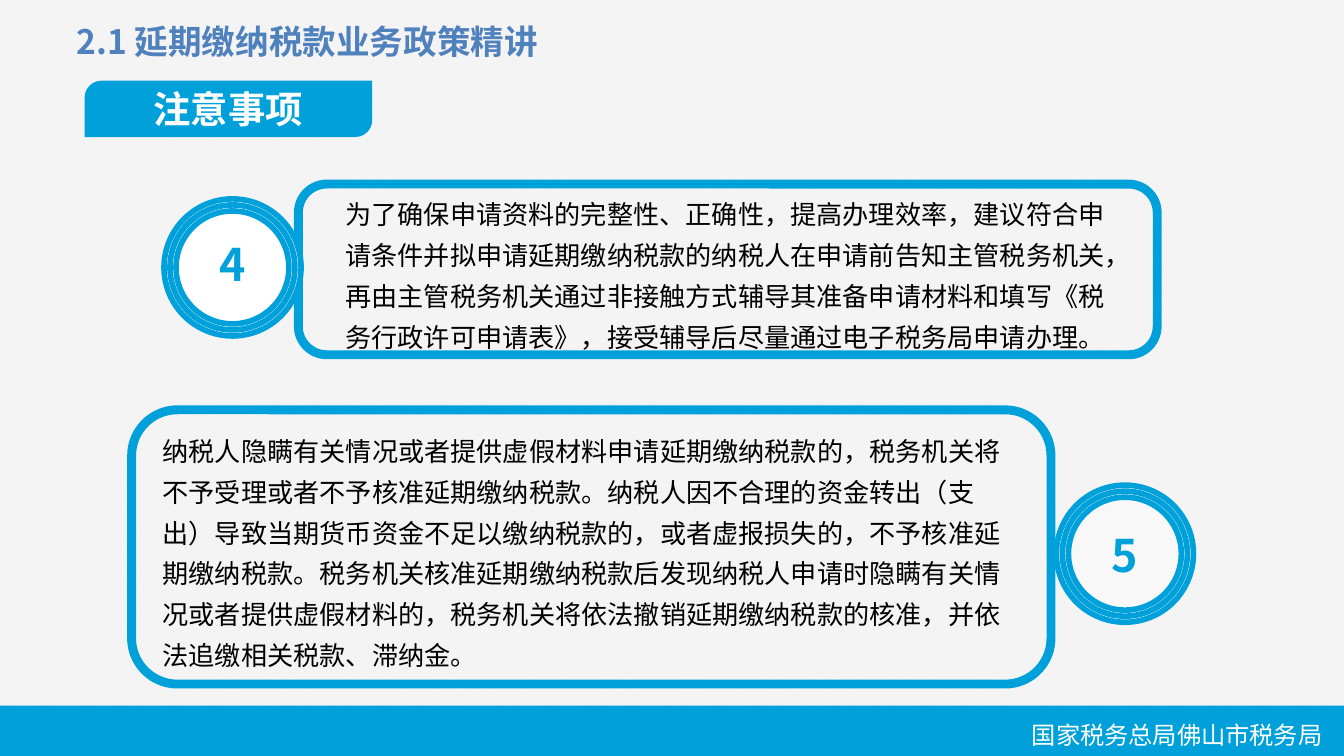
from lxml.etree import SubElement
from pptx import Presentation
from pptx.dml.color import RGBColor
from pptx.enum.dml import MSO_PATTERN
from pptx.enum.shapes import MSO_SHAPE as SHAPE
from pptx.enum.text import MSO_ANCHOR as ANCHOR, PP_ALIGN as ALIGN
from pptx.oxml.ns import qn
from pptx.util import Inches, Pt

FONT = "Noto Sans CJK SC"
BLUE, WHITE, BLACK = "00A1DA", "FFFFFF", "000000"
TITLE_BLUE, PALE, GREY = "4F81BD", "F8F8F8", "F2F2F2"
NARROW, NORMAL = (0.07, 0.04), (0.1, 0.05)

NOTE_4 = (
    "为了确保申请资料的完整性、正确性，提高办理效率，建议符合申请条件并拟申请延期缴纳税款的"
    "纳税人在申请前告知主管税务机关，再由主管税务机关通过非接触方式辅导其准备申请材料和填写"
    "《税务行政许可申请表》，接受辅导后尽量通过电子税务局申请办理。"
)
NOTE_5 = (
    "纳税人隐瞒有关情况或者提供虚假材料申请延期缴纳税款的，税务机关将不予受理或者不予核准"
    "延期缴纳税款。纳税人因不合理的资金转出（支出）导致当期货币资金不足以缴纳税款的，"
    "或者虚报损失的，不予核准延期缴纳税款。税务机关核准延期缴纳税款后发现纳税人申请时隐瞒"
    "有关情况或者提供虚假材料的，税务机关将依法撤销延期缴纳税款的核准，并依法追缴相关税款、滞纳金。"
)


def color(value):
    return RGBColor.from_string(value)


def add_shape(shapes, kind, box, fill=None, line=None, width=0):
    sp = shapes.add_shape(kind, *map(Inches, box))
    sp.shadow.inherit = False
    if fill:
        sp.fill.solid()
        sp.fill.fore_color.rgb = color(fill)
    else:
        sp.fill.background()
    if line:
        sp.line.color.rgb = color(line)
        sp.line.width = Pt(width)
    else:
        sp.line.fill.background()
    return sp


def write(sp, text, size, ink, bold=False, align=ALIGN.LEFT, spacing=None):
    p = sp.text_frame.paragraphs[0]
    p.alignment = align
    if spacing:
        p.line_spacing = spacing
    r = p.add_run()
    r.text = text
    r.font.name, r.font.size, r.font.bold = FONT, Pt(size), bold
    r.font.color.rgb = color(ink)
    SubElement(r.font._element, qn("a:ea")).set("typeface", FONT)


def add_text(slide, box, text, size, ink, insets=NORMAL, wrap=True, **style):
    sp = slide.shapes.add_textbox(*map(Inches, box))
    tf = sp.text_frame
    tf.word_wrap = wrap
    tf.margin_left = tf.margin_right = Inches(insets[0])
    tf.margin_top = tf.margin_bottom = Inches(insets[1])
    write(sp, text, size, ink, **style)


def add_footer(slide, x, y, w, h):
    add_shape(slide.shapes, SHAPE.RECTANGLE, (x, y, w, h), BLUE)
    add_text(slide, (x + 7.61, y + 0.06, 2.5, 0.32), "国家税务总局佛山市税务局", 13, WHITE)


def add_header(slide, x, y):
    add_text(slide, (x, y, 3.69, 0.4), "2.1 延期缴纳税款业务政策精讲", 18, TITLE_BLUE,
             wrap=False, bold=True)
    # Section tab
    tab = add_shape(slide.shapes, SHAPE.ROUND_2_DIAG_RECTANGLE,
                    (x + 0.16, y + 0.49, 2.14, 0.42), BLUE)
    tab.adjustments[0], tab.adjustments[1] = 0.3, 0
    tab.text_frame.vertical_anchor = ANCHOR.MIDDLE
    write(tab, "注意事项", 20, WHITE, bold=True, align=ALIGN.CENTER)


def add_badge(slide, x, y, number, number_box, fills, align):
    # Three concentric rings
    rings = slide.shapes.add_group_shape().shapes
    for i, fill in enumerate(fills):
        gap = 0.09 * i / 2
        add_shape(rings, SHAPE.OVAL, (x + gap, y + gap, 1.02 - 2 * gap, 1.02 - 2 * gap),
                  fill, BLUE, 3)
    dx, dy, w, h = number_box
    add_text(slide, (x + dx, y + dy, w, h), number, 24, BLUE, NARROW, bold=True, align=align)


def add_note(slide, x, y, w, h, text, text_box):
    add_shape(slide.shapes, SHAPE.ROUNDED_RECTANGLE, (x, y, w, h), None, BLUE, 4.75)
    dx, dy, tw, th = text_box
    add_text(slide, (x + dx, y + dy, tw, th), text, 14, BLACK, NARROW, spacing=1.3)


def main():
    prs = Presentation()
    prs.slide_width = Inches(10)
    prs.slide_height = prs.slide_width * 9 // 16
    slide = prs.slides.add_slide(prs.slide_layouts[6])

    # Hatched background
    fill = slide.background.fill
    fill.patterned()
    fill.pattern = MSO_PATTERN.LIGHT_UPWARD_DIAGONAL
    fill.fore_color.rgb, fill.back_color.rgb = color(WHITE), color(GREY)

    add_footer(slide, -0.03, 5.25, 10.07, 0.39)
    add_note(slide, 0.98, 3.05, 6.84, 2.04, NOTE_5, (0.16, 0.08, 6.52, 1.88))
    add_note(slide, 2.22, 1.37, 6.39, 1.27, NOTE_4, (0.28, 0, 5.86, 1.3))
    add_badge(slide, 1.22, 1.48, "4", (0.01, 0.24, 1, 0.48), (PALE, WHITE, None), ALIGN.CENTER)
    add_badge(slide, 7.86, 3.61, "5", (0.34, 0.28, 0.82, 0.48), (PALE, None, None), ALIGN.LEFT)
    add_header(slide, 0.47, 0.11)
    prs.save("out.pptx")


if __name__ == "__main__":
    main()
